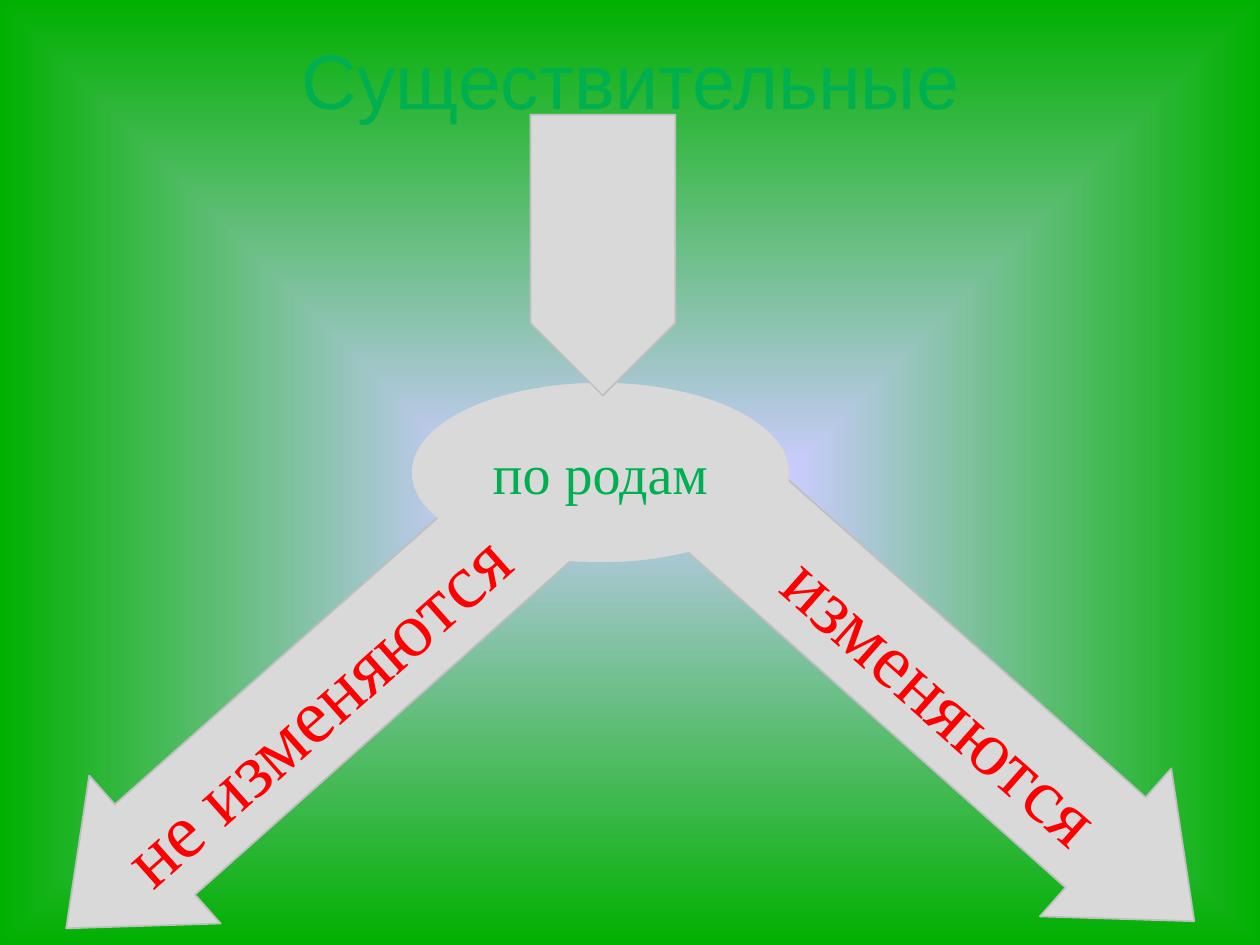
from dataclasses import dataclass

from lxml.etree import SubElement
from pptx import Presentation
from pptx.dml.color import RGBColor
from pptx.enum.shapes import MSO_SHAPE as Shape
from pptx.enum.text import MSO_ANCHOR as Anchor, PP_ALIGN as Align
from pptx.oxml.ns import qn
from pptx.util import Inches, Pt


@dataclass(frozen=True)
class Theme:
    center: str = "CCCCFF"
    edge: str = "00B000"
    panel: str = "D9D9D9"
    outline: str = "BFBFBF"
    green: str = "00B050"
    red: str = "FF0000"
    sans: str = "Arial"
    serif: str = "Times New Roman"
    large: int = 44
    medium: int = 32


THEME = Theme()


def color(value):
    return RGBColor.from_string(value)


def paint_background(page):
    fill = page.background.fill
    fill.gradient()
    for stop, value in zip(fill.gradient_stops, (THEME.center, THEME.edge)):
        stop.color.rgb = color(value)
    gradient = next(page.element.iter(qn("a:gradFill")))
    gradient.remove(gradient.find(qn("a:lin")))
    shade = SubElement(gradient, qn("a:path"), {"path": "shape"})
    sides = dict.fromkeys("ltrb", "50000")
    SubElement(shade, qn("a:fillToRect"), sides)


def write(box, text, font, size, value):
    frame = box.text_frame
    frame.word_wrap = True
    frame.vertical_anchor = Anchor.MIDDLE
    para = frame.paragraphs[0]
    para.text = text
    para.alignment = Align.CENTER
    para.font.name = font
    para.font.size = Pt(size)
    para.font.color.rgb = color(value)


def add_title(page, text, place):
    box = page.shapes.add_textbox(*map(Inches, place))
    write(box, text, THEME.sans, THEME.large, THEME.green)


def add_panel(page, kind, place, outline=THEME.outline, width=1, turn=0, flip=None):
    panel = page.shapes.add_shape(kind, *map(Inches, place))
    panel.shadow.inherit = False
    panel.fill.solid()
    panel.fill.fore_color.rgb = color(THEME.panel)
    panel.line.color.rgb = color(outline)
    panel.line.width = Pt(width)
    panel.rotation = turn
    if flip:
        panel.element.spPr.find(qn("a:xfrm")).set(flip, "1")
    return panel


def add_branch(page, text, place, turn, flip=None):
    arrow = add_panel(page, Shape.NOTCHED_RIGHT_ARROW, place, turn=turn, flip=flip)
    arrow.adjustments[0] = 0.61
    arrow.adjustments[1] = 0.6
    write(arrow, text, THEME.serif, THEME.large, THEME.red)


def add_topic(page, text, place):
    oval = add_panel(page, Shape.OVAL, place, outline=THEME.panel, width=0.25)
    write(oval, text, THEME.serif, THEME.medium, THEME.green)


def main():
    deck = Presentation()
    deck.slide_width, deck.slide_height = Inches(10), Inches(7.5)
    page = deck.slides.add_slide(deck.slide_layouts[6])
    paint_background(page)
    add_title(page, "Существительные", (2.17, 0, 5.67, 1.25))
    tilt = 41.6
    add_branch(page, "изменяются", (4.83, 4.76, 5.32, 1.57), tilt)
    add_branch(page, "не изменяются", (-0.14, 4.83, 5.28, 1.57), -tilt, "flipH")
    add_topic(page, "по родам", (3.27, 3.04, 2.99, 1.42))
    add_panel(page, Shape.PENTAGON, (3.67, 1.45, 2.23, 1.15), turn=90, flip="flipV")
    deck.save("out.pptx")


if __name__ == "__main__":
    main()
